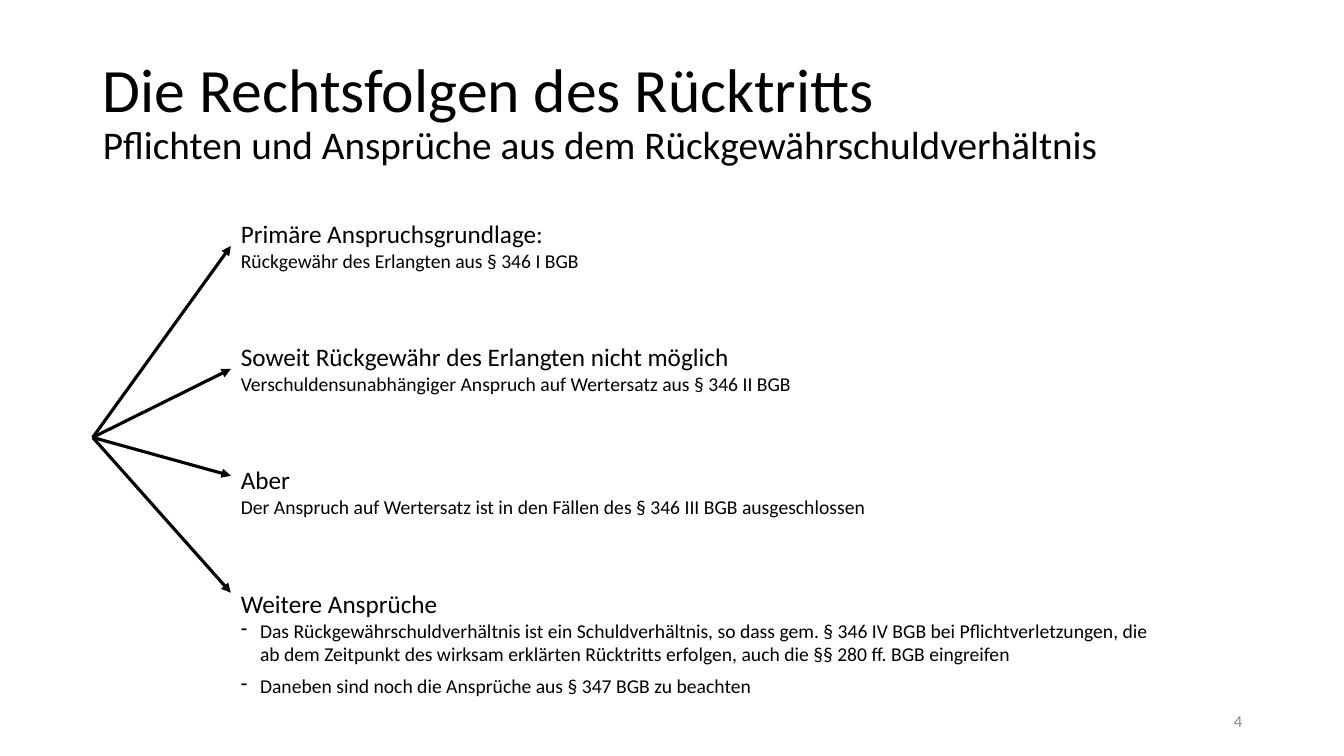
from lxml.etree import SubElement
from pptx import Presentation
from pptx.dml.color import RGBColor
from pptx.enum.shapes import MSO_CONNECTOR
from pptx.enum.text import MSO_ANCHOR, MSO_AUTO_SIZE, PP_ALIGN
from pptx.oxml.ns import qn
from pptx.util import Inches, Pt

HUB = (0.92, 4.34)
TEXT_LEFT = 2.29

# top, width, arrow end, heading, detail
CLAIMS = [
    (2.12, 3.59, 2.44, "Primäre Anspruchsgrundlage:",
     "Rückgewähr des Erlangten aus § 346 I BGB"),
    (3.34, 5.71, 3.66, "Soweit Rückgewähr des Erlangten nicht möglich",
     "Verschuldensunabhängiger Anspruch auf Wertersatz aus § 346 II BGB"),
    (4.56, 6.46, 4.72, "Aber",
     "Der Anspruch auf Wertersatz ist in den Fällen des § 346 III BGB ausgeschlossen"),
]
FURTHER_CLAIMS = [
    "Das Rückgewährschuldverhältnis ist ein Schuldverhältnis, so dass gem. § 346 IV BGB "
    "bei Pflichtverletzungen, die ab dem Zeitpunkt des wirksam erklärten Rücktritts "
    "erfolgen, auch die §§ 280 ff. BGB eingreifen",
    "Daneben sind noch die Ansprüche aus § 347 BGB zu beachten",
]


def color(value):
    return RGBColor.from_string(value)


def add_span(para, text, size=14, ink="000000", font="Calibri"):
    span = para.add_run()
    span.text = text
    span.font.name = font
    span.font.size = Pt(size)
    span.font.color.rgb = color(ink)


class SlideBuilder:
    ink = "000000"
    muted = "8C8C8C"
    heading_size = 18
    line_width = 2.25

    def __init__(self, deck):
        self.page = deck.slides.add_slide(deck.slide_layouts[5])

    def title(self, heading, subheading):
        title = self.page.shapes.title
        title.left, title.top = Inches(0.92), Inches(0.4)
        title.width, title.height = Inches(11.5), Inches(1.45)
        frame = title.text_frame
        frame.auto_size = MSO_AUTO_SIZE.NONE
        frame.vertical_anchor = MSO_ANCHOR.MIDDLE
        para = frame.paragraphs[0]
        para.alignment = PP_ALIGN.LEFT
        para.line_spacing = 0.9
        add_span(para, heading, size=44)
        para.add_line_break()
        add_span(para, subheading, size=28)

    def text_box(self, left, top, width, height, wrap=True):
        box = self.page.shapes.add_textbox(
            Inches(left), Inches(top), Inches(width), Inches(height))
        box.text_frame.word_wrap = wrap
        return box.text_frame

    def claim(self, top, width, height, heading, wrap=False):
        """Add a text box that opens with a claim heading."""
        frame = self.text_box(TEXT_LEFT, top, width, height, wrap)
        frame.auto_size = MSO_AUTO_SIZE.SHAPE_TO_FIT_TEXT
        add_span(frame.paragraphs[0], heading, size=self.heading_size)
        return frame

    def dash_item(self, frame, text, space_after=0):
        para = frame.add_paragraph()
        para.space_after = Pt(space_after)
        add_span(para, text)
        properties = para._p.get_or_add_pPr()
        properties.set("marL", str(Inches(0.19)))
        properties.set("indent", str(-Inches(0.19)))
        SubElement(properties, qn("a:buChar"), char="-")

    def arrow(self, end_y):
        """Draw an arrow from the hub to the left edge of the texts."""
        arrow = self.page.shapes.add_connector(
            MSO_CONNECTOR.STRAIGHT, Inches(HUB[0]), Inches(HUB[1]),
            Inches(TEXT_LEFT), Inches(end_y))
        arrow.line.color.rgb = color(self.ink)
        arrow.line.width = Pt(self.line_width)
        SubElement(arrow.line._get_or_add_ln(), qn("a:tailEnd"), type="triangle")
        SubElement(arrow._element.spPr, qn("a:effectLst"))

    def page_number(self, number):
        frame = self.text_box(9.42, 6.95, 3, 0.4)
        frame.vertical_anchor = MSO_ANCHOR.MIDDLE
        para = frame.paragraphs[0]
        para.alignment = PP_ALIGN.RIGHT
        add_span(para, number, size=12, ink=self.muted)


def main():
    deck = Presentation()
    deck.slide_width, deck.slide_height = Inches(13.33), Inches(7.5)
    slide = SlideBuilder(deck)
    slide.title("Die Rechtsfolgen des Rücktritts",
                "Pflichten und Ansprüche aus dem Rückgewährschuldverhältnis")
    slide.page_number("4")

    for top, width, arrow_end, heading, detail in CLAIMS:
        frame = slide.claim(top, width, 0.64, heading)
        add_span(frame.add_paragraph(), detail)
        slide.arrow(arrow_end)

    frame = slide.claim(5.79, 9.28, 1.19, "Weitere Ansprüche", wrap=True)
    first, second = FURTHER_CLAIMS
    slide.dash_item(frame, first, space_after=6)
    slide.dash_item(frame, second)
    slide.arrow(5.88)

    deck.save("out.pptx")


if __name__ == "__main__":
    main()
